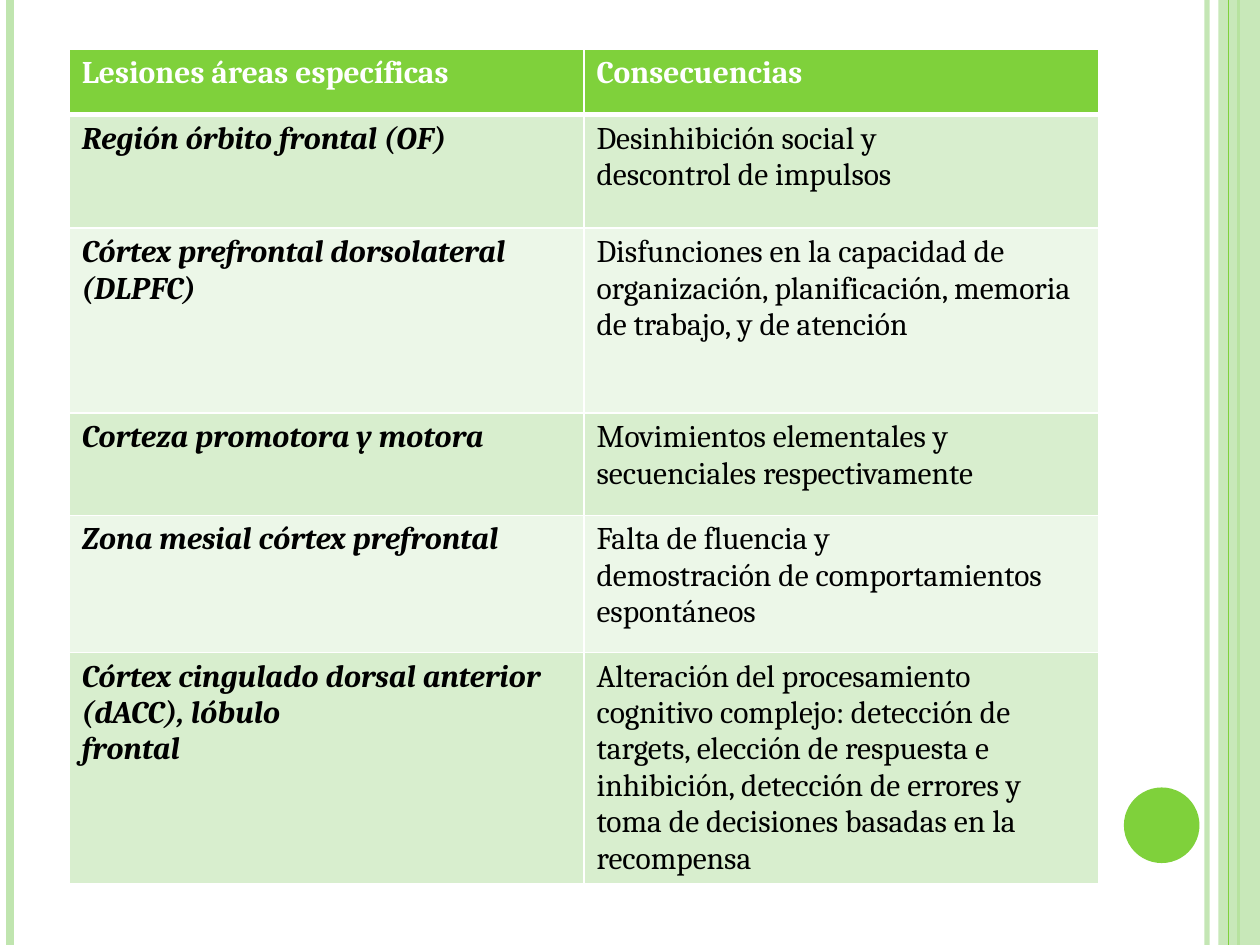
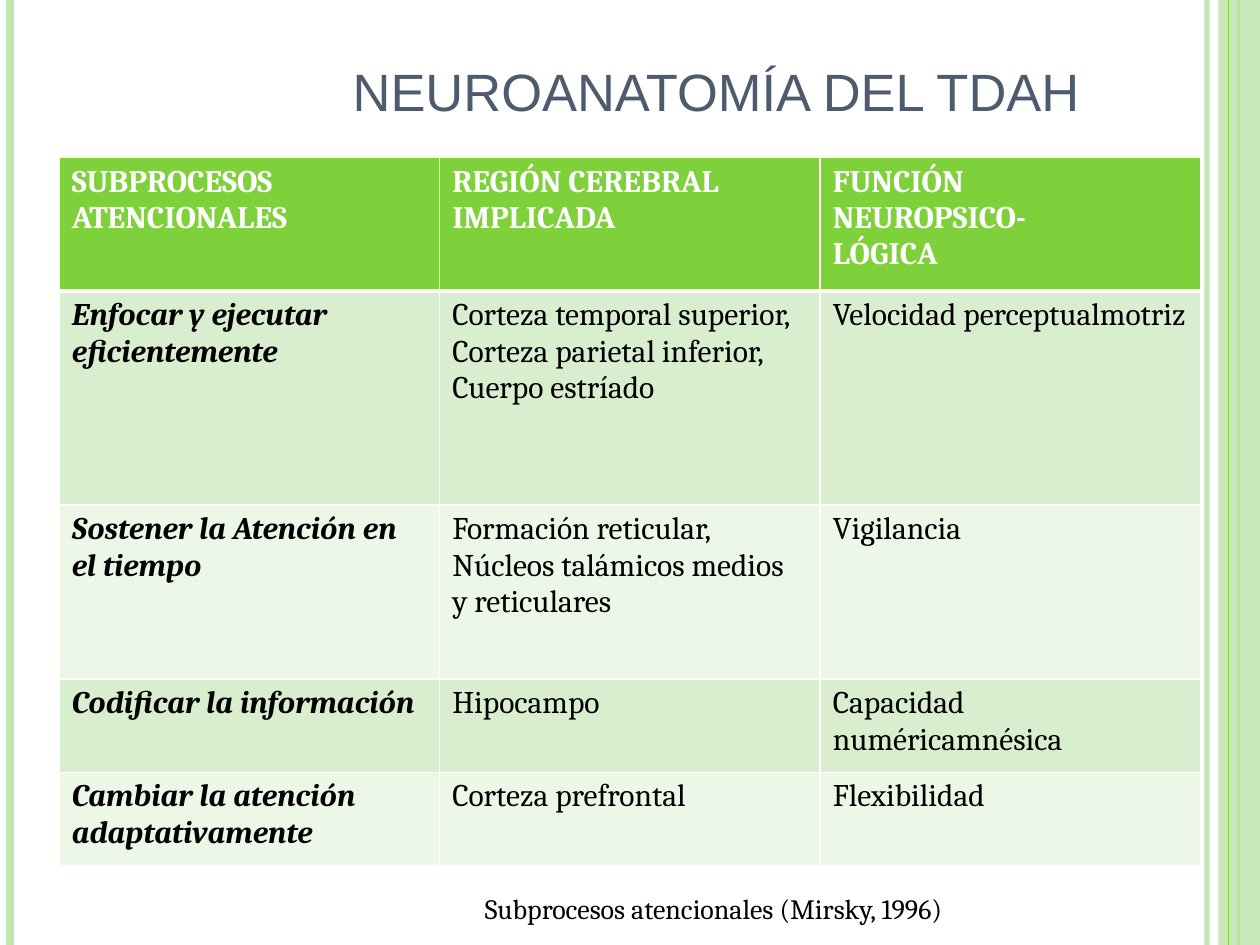
from dataclasses import dataclass

from lxml.etree import SubElement
from pptx import Presentation
from pptx.dml.color import RGBColor
from pptx.enum.shapes import MSO_CONNECTOR, MSO_SHAPE
from pptx.enum.text import MSO_ANCHOR, PP_ALIGN
from pptx.oxml import parse_xml
from pptx.oxml.ns import nsdecls, qn
from pptx.util import Inches, Pt


@dataclass(frozen=True)
class Theme:
    green: str = "7FD13B"
    pale_green: str = "C0E5AF"
    bands: tuple = ("D8EECE", "ECF7E8")
    white: str = "FFFFFF"
    black: str = "000000"
    slate: str = "4E5B6F"
    title_font: str = "Arial"
    body_font: str = "Cambria"
    title_size: int = 30
    table_size: int = 18
    caption_size: int = 16
    thin_border: int = 1
    header_border: int = 3


THEME = Theme()
WIDTH, HEIGHT = 10, 7.5

# x, colour, points, opacity in percent
RULES_BEHIND = [
    (9.58, THEME.pale_green, 3, 93),
    (0.08, THEME.pale_green, 4.5, 100),
    (9.83, THEME.green, 1.5, 100),
]
RULES_IN_FRONT = [(9.75, THEME.green, 0.75, 100)]
SIDE_BAND = (9.67, 0, 0.33, HEIGHT)
DOT = (8.92, 6.25, 0.6, 0.6)

# A line break inside a cell starts a new paragraph.
SLIDES = [
    {
        "table": {
            "left": 0.55, "top": 0.39, "width": 8.17,
            "row_heights": [0.52, 0.9, 1.47, 0.81, 1.09, 1.67],
            "rows": [
                ("Lesiones áreas específicas", "Consecuencias"),
                ("Región órbito frontal (OF)",
                 "Desinhibición social y\ndescontrol de impulsos"),
                ("Córtex prefrontal dorsolateral (DLPFC)",
                 "Disfunciones en la capacidad de organización, planificación, "
                 "memoria de trabajo, y de atención"),
                ("Corteza promotora y motora",
                 "Movimientos elementales y secuenciales respectivamente"),
                ("Zona mesial córtex prefrontal",
                 "Falta de fluencia y\ndemostración de comportamientos espontáneos"),
                ("Córtex cingulado dorsal anterior (dACC), lóbulo\nfrontal",
                 "Alteración del procesamiento cognitivo complejo: detección de "
                 "targets, elección de respuesta e inhibición, detección de errores "
                 "y toma de decisiones basadas en la recompensa"),
            ],
        },
    },
    {
        "title": "NEUROANATOMÍA DEL TDAH",
        "table": {
            "left": 0.47, "top": 1.25, "width": 9.06,
            "row_heights": [1.06, 1.7, 1.38, 0.74, 0.74],
            "rows": [
                ("SUBPROCESOS\nATENCIONALES", "REGIÓN CEREBRAL\nIMPLICADA",
                 "FUNCIÓN\nNEUROPSICO-\nLÓGICA"),
                ("Enfocar y ejecutar\neficientemente",
                 "Corteza temporal superior,\nCorteza parietal inferior,\nCuerpo estríado",
                 "Velocidad perceptualmotriz"),
                ("Sostener la Atención en el tiempo",
                 "Formación reticular,\nNúcleos talámicos medios\ny reticulares",
                 "Vigilancia"),
                ("Codificar la información", "Hipocampo", "Capacidad numéricamnésica"),
                ("Cambiar la atención\nadaptativamente", "Corteza prefrontal",
                 "Flexibilidad"),
            ],
        },
        "caption": "Subprocesos atencionales (Mirsky, 1996)",
    },
]
TITLE_BOX = (0.5, 0.3, 8.17, 0.72)
CAPTION_BOX = (3.75, 7.03, 5.56, 0.37)


def inches(box):
    return [Inches(length) for length in box]


def set_opacity(shape, percent):
    for colour in shape._element.spPr.iter(qn("a:srgbClr")):
        SubElement(colour, qn("a:alpha"), val=str(percent * 1000))


def add_rules(slide, rules):
    """Draw full-height vertical lines."""
    for x, colour, points, opacity in rules:
        rule = slide.shapes.add_connector(
            MSO_CONNECTOR.STRAIGHT, *inches((x, 0, x, HEIGHT)))
        rule.line.color.rgb = RGBColor.from_string(colour)
        rule.line.width = Pt(points)
        if opacity < 100:
            set_opacity(rule, opacity)
        SubElement(rule._element.spPr, qn("a:effectLst"))


def add_plain_shape(slide, preset, box, colour):
    shape = slide.shapes.add_shape(preset, *inches(box))
    shape.shadow.inherit = False
    shape.fill.solid()
    shape.fill.fore_color.rgb = RGBColor.from_string(colour)
    shape.line.fill.background()
    return shape


def add_frame(slide):
    """Draw the side bands and the dot that every slide carries."""
    add_rules(slide, RULES_BEHIND)
    band = add_plain_shape(slide, MSO_SHAPE.RECTANGLE, SIDE_BAND, THEME.pale_green)
    set_opacity(band, 87)
    add_rules(slide, RULES_IN_FRONT)
    add_plain_shape(slide, MSO_SHAPE.OVAL, DOT, THEME.green)


def write(text_frame, text, font, size, colour, bold=False, italic=False):
    text_frame.text = text
    for paragraph in text_frame.paragraphs:
        paragraph.font.name = font
        paragraph.font.size = Pt(size)
        paragraph.font.color.rgb = RGBColor.from_string(colour)
        paragraph.font.bold = bold
        paragraph.font.italic = italic


def add_text(slide, box, *style):
    text_frame = slide.shapes.add_textbox(*inches(box)).text_frame
    text_frame.word_wrap = True
    write(text_frame, *style)
    return text_frame


def set_borders(cell, top, bottom):
    """Give the cell white borders; top and bottom are widths in points."""
    thin = THEME.thin_border
    sides = [("L", thin), ("R", thin), ("T", top), ("B", bottom)]
    properties = cell._tc.get_or_add_tcPr()
    for position, (side, points) in enumerate(sides):
        properties.insert(position, parse_xml(
            f'<a:ln{side} {nsdecls("a")} w="{Pt(points)}"><a:solidFill>'
            f'<a:srgbClr val="{THEME.white}"/></a:solidFill></a:ln{side}>'))


def add_grid(slide, left, top, width, row_heights, rows):
    column_count = len(rows[0])
    table = slide.shapes.add_table(
        len(rows), column_count,
        *inches((left, top, width, sum(row_heights)))).table
    for column in table.columns:
        column.width = Inches(width / column_count)
    for row, height in zip(table.rows, row_heights):
        row.height = Inches(height)
    thin, thick = THEME.thin_border, THEME.header_border
    for row_index, texts in enumerate(rows):
        header = row_index == 0
        fill = THEME.green if header else THEME.bands[(row_index - 1) % 2]
        for column_index, text in enumerate(texts):
            cell = table.cell(row_index, column_index)
            row_label = column_index == 0 and not header
            cell.fill.solid()
            cell.fill.fore_color.rgb = RGBColor.from_string(fill)
            set_borders(cell, thick if row_index == 1 else thin,
                        thick if header else thin)
            write(cell.text_frame, text, THEME.body_font, THEME.table_size,
                  THEME.white if header else THEME.black,
                  bold=header or row_label, italic=row_label)


def main():
    presentation = Presentation()
    presentation.slide_width, presentation.slide_height = inches((WIDTH, HEIGHT))
    for content in SLIDES:
        slide = presentation.slides.add_slide(presentation.slide_layouts[6])
        add_frame(slide)
        if "title" in content:
            title = add_text(slide, TITLE_BOX, content["title"], THEME.title_font,
                             THEME.title_size, THEME.slate)
            title.vertical_anchor = MSO_ANCHOR.BOTTOM
            title.paragraphs[0].alignment = PP_ALIGN.RIGHT
        add_grid(slide, **content["table"])
        if "caption" in content:
            add_text(slide, CAPTION_BOX, content["caption"], THEME.body_font,
                     THEME.caption_size, THEME.black)
    presentation.save("out.pptx")


if __name__ == "__main__":
    main()
